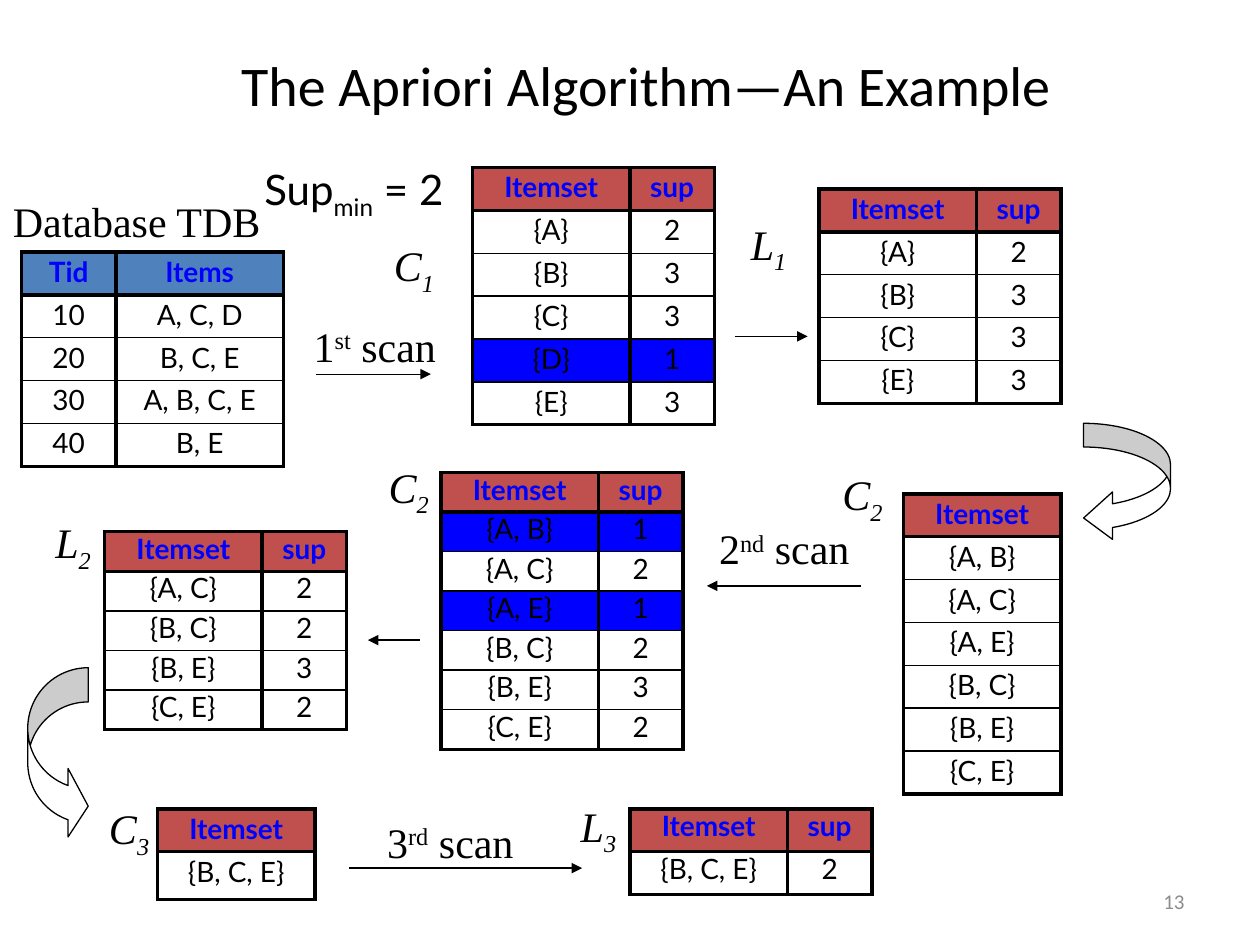
from lxml.etree import SubElement
from pptx import Presentation
from pptx.dml.color import RGBColor
from pptx.enum.shapes import MSO_CONNECTOR, MSO_SHAPE
from pptx.enum.text import MSO_ANCHOR, MSO_AUTO_SIZE, PP_ALIGN
from pptx.oxml.ns import qn
from pptx.util import Inches, Pt

THEME = {
    "black": "000000", "white": "FFFFFF", "gray": "8C8C8C",
    "blue": "0000FF", "database": "4F81BD", "itemset": "C0504D",
    "title": 32, "label": 24, "cell": 16, "number": 12,
    "thick": 2.25, "thin": 1, "line": 0.75,
    "heading_font": "Calibri", "body_font": "Lato", "label_font": "Times New Roman",
}
SUB, SUPER = -25000, 30000

# left, top, width, (text, baseline) runs, italic
LABELS = [
    (0, 1.5, 2.17, [("Database TDB", 0)], False),
    (2.38, 2.49, 1.19, [("1", 0), ("st", SUPER), (" scan", 0)], False),
    (5.59, 4.1, 1.27, [("2", 0), ("nd", SUPER), (" scan", 0)], False),
    (2.96, 6.43, 1.23, [("3", 0), ("rd", SUPER), (" scan", 0)], False),
    (3.02, 1.88, 0.53, [("C", 0), ("1", SUB)], True),
    (5.85, 1.71, 0.5, [("L", 0), ("1", SUB)], True),
    (0.33, 4.08, 0.5, [("L", 0), ("2", SUB)], True),
    (2.98, 3.64, 0.53, [("C", 0), ("2", SUB)], True),
    (6.58, 3.7, 0.53, [("C", 0), ("2", SUB)], True),
    (0.76, 6.35, 0.53, [("C", 0), ("3", SUB)], True),
    (4.5, 6.33, 0.5, [("L", 0), ("3", SUB)], True),
]

# start x, end x, y
ARROWS = [
    (2.51, 3.42, 2.97), (5.83, 6.41, 2.67), (6.83, 5.61, 4.65),
    (3.33, 2.92, 5.08), (2.77, 4.62, 6.89),
]

CURVED_ARROWS = [
    (MSO_SHAPE.CURVED_LEFT_ARROW, (8.6, 3.36, 0.69, 0.94), (0.273, 0.546, 0.333)),
    (MSO_SHAPE.CURVED_RIGHT_ARROW, (0.22, 5.3, 0.48, 1.37), (0.566, 1.132, 0.333)),
]

PAIR_COLUMNS = (1.25, 0.67)
TABLES = [
    {"at": (0.17, 2), "columns": (0.75, 1.33), "header": "database", "rows": [
        ("Tid", "Items"), ("10", "A, C, D"), ("20", "B, C, E"),
        ("30", "A, B, C, E"), ("40", "B, E")]},
    {"at": (3.75, 1.33), "pruned": {4}, "rows": [
        ("Itemset", "sup"), ("{A}", "2"), ("{B}", "3"), ("{C}", "3"),
        ("{D}", "1"), ("{E}", "3")]},
    {"at": (6.5, 1.5), "rows": [
        ("Itemset", "sup"), ("{A}", "2"), ("{B}", "3"), ("{C}", "3"), ("{E}", "3")]},
    {"at": (7.17, 3.92), "rows": [
        ("Itemset",), ("{A, B}",), ("{A, C}",), ("{A, E}",),
        ("{B, C}",), ("{B, E}",), ("{C, E}",)]},
    {"at": (3.5, 3.75), "row_height": 0.3125, "spacing": 0.8, "pruned": {1, 3}, "rows": [
        ("Itemset", "sup"), ("{A, B}", "1"), ("{A, C}", "2"), ("{A, E}", "1"),
        ("{B, C}", "2"), ("{B, E}", "3"), ("{C, E}", "2")]},
    {"at": (0.83, 4.22), "row_height": 0.3125, "spacing": 0.8, "rows": [
        ("Itemset", "sup"), ("{A, C}", "2"), ("{B, C}", "2"),
        ("{B, E}", "3"), ("{C, E}", "2")]},
    {"at": (1.25, 6.42), "last_height": 0.38, "rows": [("Itemset",), ("{B, C, E}",)]},
    {"at": (5, 6.42), "spacing": 0.8, "rows": [("Itemset", "sup"), ("{B, C, E}", "2")]},
]


def color(name):
    return RGBColor.from_string(THEME[name])


def fill_solid(target, name):
    target.fill.solid()
    target.fill.fore_color.rgb = color(name)


def add_run(paragraph, text, size, font, ink="black", baseline=0, **styles):
    run = paragraph.add_run()
    run.text = text
    run.font.color.rgb = color(ink)
    formats = {"size": Pt(THEME[size]), "name": THEME[font], **styles}
    for name, value in formats.items():
        setattr(run.font, name, value)
    if baseline:
        run.font._element.set("baseline", str(baseline))


def add_text(slide, box, runs, size, font, align=PP_ALIGN.CENTER, ink="black",
             italic=False, **frame_formats):
    frame = slide.shapes.add_textbox(*map(Inches, box)).text_frame
    formats = {"word_wrap": True, "vertical_anchor": MSO_ANCHOR.MIDDLE, **frame_formats}
    for name, value in formats.items():
        setattr(frame, name, value)
    paragraph = frame.paragraphs[0]
    paragraph.alignment = align
    for text, baseline in runs:
        add_run(paragraph, text, size, font, ink, baseline, italic=italic)


def add_arrow(slide, start, end, y):
    arrow = slide.shapes.add_connector(
        MSO_CONNECTOR.STRAIGHT, *map(Inches, (start, y, end, y)))
    arrow.line.color.rgb = color("black")
    arrow.line.width = Pt(THEME["line"])
    SubElement(arrow.line._get_or_add_ln(), qn("a:tailEnd"), type="triangle")
    SubElement(arrow._element.spPr, qn("a:effectLst"))


def add_curved_arrow(slide, kind, box, adjustments):
    shape = slide.shapes.add_shape(kind, *map(Inches, box))
    shape.shadow.inherit = False
    for index, value in enumerate(adjustments):
        shape.adjustments[index] = value
    fill_solid(shape, "white")
    shape.line.color.rgb = color("black")
    shape.line.width = Pt(THEME["line"])


def set_borders(cell, widths):
    """Draw the edges in schema order, ahead of the cell's fill."""
    properties = cell._tc.get_or_add_tcPr()
    for index, (edge, width) in enumerate(widths.items()):
        line = SubElement(properties, qn(f"a:{edge}"), w=str(Pt(THEME[width])))
        SubElement(SubElement(line, qn("a:solidFill")), qn("a:srgbClr"), val=THEME["black"])
        properties.insert(index, line)


def add_itemset_table(slide, at, rows, columns=PAIR_COLUMNS, header="itemset",
                      row_height=0.34, last_height=None, spacing=0.9, pruned=()):
    columns = columns[:len(rows[0])]
    heights = [row_height] * (len(rows) - 1) + [last_height or row_height]
    box = (*at, sum(columns), sum(heights))
    table = slide.shapes.add_table(len(rows), len(columns), *map(Inches, box)).table
    table.first_row = table.horz_banding = False
    for column, width in zip(table.columns, columns):
        column.width = Inches(width)
    for row_index, values in enumerate(rows):
        table.rows[row_index].height = Inches(heights[row_index])
        is_header = row_index == 0
        for column_index, value in enumerate(values):
            cell = table.cell(row_index, column_index)
            if is_header or row_index in pruned:
                fill_solid(cell, header if is_header else "blue")
            else:
                cell.fill.background()
            paragraph = cell.text_frame.paragraphs[0]
            paragraph.alignment = PP_ALIGN.CENTER
            paragraph.line_spacing = spacing
            add_run(paragraph, value, "cell", "body_font",
                    "blue" if is_header else "black", bold=is_header)
            set_borders(cell, {
                "lnL": "thick", "lnR": "thick",
                "lnT": "thick" if row_index <= 1 else "thin",
                "lnB": "thick" if row_index in (0, len(rows) - 1) else "thin"})


def main():
    presentation = Presentation()
    presentation.slide_width, presentation.slide_height = Inches(10), Inches(7.5)
    slide = presentation.slides.add_slide(presentation.slide_layouts[6])
    add_text(slide, (0.92, 0.33, 8.52, 0.67),
             [("The Apriori Algorithm—An Example ", 0)], "title", "heading_font")
    add_text(slide, (7.17, 6.95, 2.33, 0.4), [("13", 0)], "number", "heading_font",
             PP_ALIGN.RIGHT, "gray")
    for left, top, width, runs, italic in LABELS:
        add_text(slide, (left, top, width, 0.5), runs, "label", "label_font",
                 italic=italic, word_wrap=False, auto_size=MSO_AUTO_SIZE.SHAPE_TO_FIT_TEXT)
    for arrow in ARROWS:
        add_arrow(slide, *arrow)
    for curved_arrow in CURVED_ARROWS:
        add_curved_arrow(slide, *curved_arrow)
    for table in TABLES:
        add_itemset_table(slide, **table)
    add_text(slide, (2, 1.25, 1.92, 0.5), [("Sup", 0), ("min", SUB), (" = 2", 0)],
             "label", "body_font", PP_ALIGN.LEFT, vertical_anchor=MSO_ANCHOR.TOP,
             auto_size=MSO_AUTO_SIZE.SHAPE_TO_FIT_TEXT)
    presentation.save("out.pptx")


if __name__ == "__main__":
    main()
